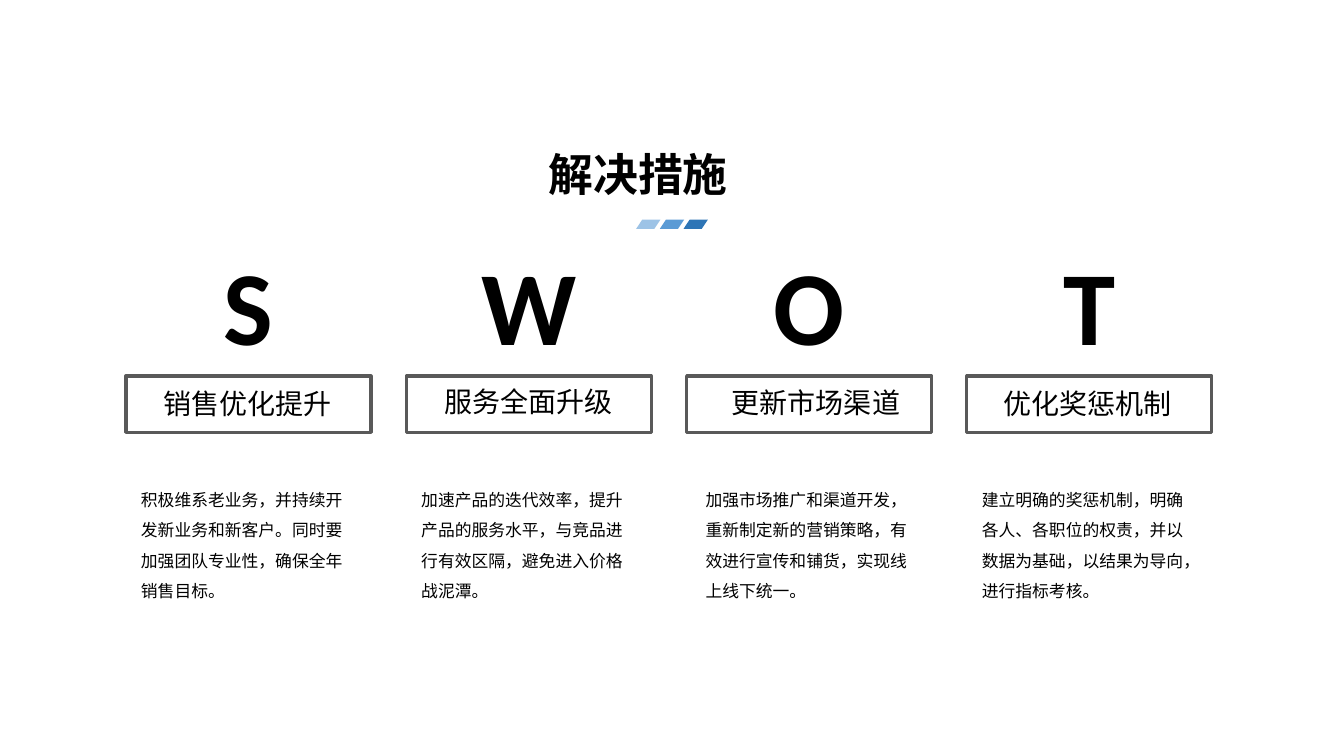
from dataclasses import dataclass

from lxml import etree
from pptx import Presentation
from pptx.dml.color import RGBColor
from pptx.enum.shapes import MSO_SHAPE
from pptx.enum.text import MSO_ANCHOR, MSO_AUTO_SIZE, PP_ALIGN
from pptx.oxml.ns import qn
from pptx.util import Inches, Pt

RECTANGLE = MSO_SHAPE.RECTANGLE
PARALLELOGRAM = MSO_SHAPE.PARALLELOGRAM
LEFT, CENTER, JUSTIFY = PP_ALIGN.LEFT, PP_ALIGN.CENTER, PP_ALIGN.JUSTIFY
TOP = MSO_ANCHOR.TOP
FIT_SHAPE = MSO_AUTO_SIZE.SHAPE_TO_FIT_TEXT


@dataclass(frozen=True)
class Theme:
    latin: str = "Calibri"
    chinese: str = "Noto Sans CJK SC"
    ink: str = "000000"
    frame: str = "595959"
    accents: tuple = ("9DC3E6", "5B9BD5", "2E75B6")
    title_size: int = 32
    letter_size: int = 75
    heading_size: int = 20
    body_size: int = 12


THEME = Theme()


def write(box, text, size, font, bold=False, align=LEFT, spacing=1.0, wrap=True):
    """Fill a box with one paragraph, using the font for Latin and Chinese text."""
    frame = box.text_frame
    frame.word_wrap = wrap
    frame.auto_size = FIT_SHAPE
    frame.vertical_anchor = TOP
    para = frame.paragraphs[0]
    para.text = text
    para.alignment = align
    para.line_spacing = spacing
    para.font.size = Pt(size)
    para.font.bold = bold
    para.font.name = font
    para.font.color.rgb = RGBColor.from_string(THEME.ink)
    latin = para._p.find(".//" + qn("a:latin"))
    east_asian = etree.Element(qn("a:ea"), typeface=font)
    latin.addnext(east_asian)


def add_plain_shape(kind, left, top, width, height):
    shape = page.shapes.add_shape(
        kind, Inches(left), Inches(top), Inches(width), Inches(height))
    shape.shadow.inherit = False
    return shape


deck = Presentation()
deck.slide_width, deck.slide_height = Inches(13.33), Inches(7.5)
page = deck.slides.add_slide(deck.slide_layouts[5])

# Title with its three slanted accents
title = page.shapes.title
title.left, title.top = Inches(5.34), Inches(1.41)
title.width, title.height = Inches(2.65), Inches(0.64)
write(title, "解决措施", THEME.title_size, THEME.chinese, bold=True, align=JUSTIFY)

for index, color in enumerate(THEME.accents):
    accent = add_plain_shape(PARALLELOGRAM, 6.31 + index * 0.235, 2.18, 0.24, 0.09)
    accent.adjustments[0] = 0.66
    accent.fill.solid()
    accent.fill.fore_color.rgb = RGBColor.from_string(color)
    accent.line.fill.background()

# Four columns: letter, letter width, heading, heading left and top, body, body left
FIRST_LEFT, PITCH, FRAME_WIDTH = 1.25, 2.78, 2.43
columns = [
    ("S", 0.7, "销售优化提升", 1.52, 3.79,
     "积极维系老业务，并持续开发新业务和新客户。同时要加强团队专业性，确保全年销售目标。", 1.3),
    ("W", 1.16, "服务全面升级", 4.31, 3.77,
     "加速产品的迭代效率，提升产品的服务水平，与竞品进行有效区隔，避免进入价格战泥潭。", 4.08),
    ("O", 0.91, "更新市场渠道", 7.16, 3.78,
     "加强市场推广和渠道开发，重新制定新的营销策略，有效进行宣传和铺货，实现线上线下统一。", 6.9),
    ("T", 0.72, "优化奖惩机制", 9.85, 3.79,
     "建立明确的奖惩机制，明确各人、各职位的权责，并以数据为基础，以结果为导向，进行指标考核。", 9.64),
]

for index, column in enumerate(columns):
    letter, letter_width, heading, heading_left, heading_top, body, body_left = column
    left = FIRST_LEFT + index * PITCH

    letter_left = left + (FRAME_WIDTH - letter_width) / 2
    letter_box = page.shapes.add_textbox(
        Inches(letter_left), Inches(2.34), Inches(letter_width), Inches(1.36))
    write(letter_box, letter, THEME.letter_size, THEME.latin,
          bold=True, align=CENTER, wrap=False)

    frame = add_plain_shape(RECTANGLE, left, 3.73, FRAME_WIDTH, 0.56)
    frame.fill.background()
    frame.line.color.rgb = RGBColor.from_string(THEME.frame)
    frame.line.width = Pt(2.25)

    heading_box = page.shapes.add_textbox(
        Inches(heading_left), Inches(heading_top), Inches(2.5), Inches(0.44))
    write(heading_box, heading, THEME.heading_size, THEME.chinese)

    body_box = page.shapes.add_textbox(
        Inches(body_left), Inches(4.71), Inches(2.34), Inches(1.27))
    write(body_box, body, THEME.body_size, THEME.chinese, spacing=1.5)

deck.save("out.pptx")
